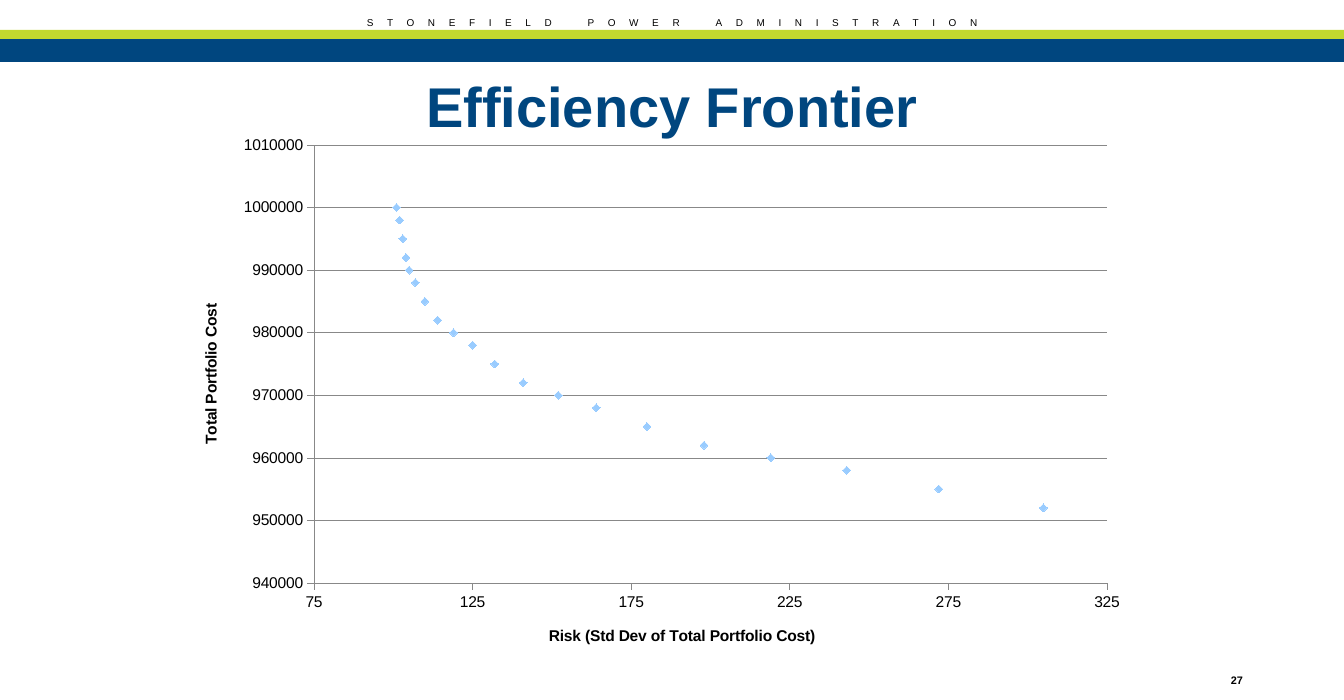
from lxml import etree
from pptx import Presentation
from pptx import util as u
from pptx.chart.data import XyChartData
from pptx.dml.color import RGBColor
from pptx.enum import chart as c, shapes, text
from pptx.oxml import ns

PX = u.Inches(1) / 112
FONT = "Arial"
NAVY, LIME, BLACK, GRAY, SKY = "00467F", "C1D82F", "000000", "888888", "99CCFF"

RISKS = [101, 102, 103, 104, 105, 107, 110, 114, 119, 125,
         132, 141, 152, 164, 180, 198, 219, 243, 272, 305]
TOP_COST, COST_STEP = 1000000, 2500


def color(value):
    return RGBColor.from_string(value)


def place(*lengths):
    return [u.Emu(round(length * PX)) for length in lengths]


def style(font, size, value=BLACK, bold=False):
    font.name, font.size, font.bold = FONT, u.Pt(size), bold
    font.color.rgb = color(value)


def prepare(frame):
    frame.word_wrap = True
    frame.auto_size = text.MSO_AUTO_SIZE.NONE
    frame.vertical_anchor = text.MSO_ANCHOR.MIDDLE
    frame.margin_left = frame.margin_right = 0
    frame.margin_top = frame.margin_bottom = 0
    para = frame.paragraphs[0]
    para.alignment = text.PP_ALIGN.CENTER
    return para


def add_span(para, words, size, value=BLACK, bold=False, spacing=0):
    """Add a run; spacing between letters is in hundredths of a point."""
    span = para.add_run()
    span.text = words
    style(span.font, size, value, bold)
    if spacing:
        span._r.get_or_add_rPr().set("spc", str(spacing))


def add_bar(page, left, top, width, height, fill):
    bar = page.shapes.add_shape(shapes.MSO_SHAPE.RECTANGLE,
                                *place(left, top, width, height))
    bar.shadow.inherit = False
    bar.fill.solid()
    bar.fill.fore_color.rgb = color(fill)
    bar.line.fill.background()


def add_header(page, left, top, width, height):
    # Agency name, letterspaced
    box = page.shapes.add_textbox(*place(left, top + 13, width, 20))
    para = prepare(box.text_frame)
    for index, word in enumerate(["STONEFIELD", "POWER", "ADMINISTRATION"]):
        if index:
            add_span(para, " ", 6.4, spacing=1250)
        add_span(para, word, 6.4, spacing=880)
    # Colour bands
    add_bar(page, left, top + 38, width, height - 38, NAVY)
    add_bar(page, left, top + 30, width, 9, LIME)


def add_title(page, left, top, width, height):
    title = page.shapes.title
    title.left, title.top, title.width, title.height = place(left, top, width, height)
    add_span(prepare(title.text_frame), "Efficiency Frontier", 36, NAVY, True)


def add_page_number(page, left, top, width, height):
    box = page.shapes.add_textbox(*place(left, top, width, height))
    add_span(prepare(box.text_frame), "27", 7, bold=True)


def set_layout(parent, before, **parts):
    """Give a chart part a manual layout, as fractions of the chart."""
    for old in parent.findall(ns.qn("c:layout")):
        parent.remove(old)
    layout = etree.Element(ns.qn("c:layout"))
    manual = etree.SubElement(layout, ns.qn("c:manualLayout"))
    for name, value in parts.items():
        etree.SubElement(manual, ns.qn("c:" + name)).set("val", str(value))
    follower = parent.find(ns.qn(before))
    if follower is None:
        parent.append(layout)
    else:
        follower.addprevious(layout)


def format_line(line):
    line.color.rgb, line.width = color(GRAY), u.Pt(0.25)


def format_axis(axis, low, high, step, words, x, y):
    axis.minimum_scale, axis.maximum_scale, axis.major_unit = low, high, step
    axis.major_tick_mark = c.XL_TICK_MARK.OUTSIDE
    axis.minor_tick_mark = c.XL_TICK_MARK.NONE
    format_line(axis.format.line)
    style(axis.tick_labels.font, 10)
    axis.tick_labels.number_format = "0"
    axis.tick_labels.number_format_is_linked = False
    add_span(axis.axis_title.text_frame.paragraphs[0], words, 10, bold=True)
    set_layout(axis.axis_title._element, "c:overlay",
               xMode="edge", yMode="edge", x=x, y=y)


def add_frontier_chart(page, left, top, width, height):
    data = XyChartData()
    points = data.add_series("Series 1")
    for index, risk in enumerate(RISKS):
        points.add_data_point(risk, round(TOP_COST - index * COST_STEP, -3))
    chart = page.shapes.add_chart(c.XL_CHART_TYPE.XY_SCATTER,
                                  *place(left, top, width, height), data).chart
    chart.has_legend = chart.has_title = False
    style(chart.font, 10)

    # Axes and gridlines
    format_axis(chart.category_axis, 75, 325, 50,
                "Risk (Std Dev of Total Portfolio Cost)", 368 / width, 498 / height)
    format_axis(chart.value_axis, 940000, 1010000, 10000,
                "Total Portfolio Cost", 20 / width, 176 / height)
    chart.category_axis.has_major_gridlines = False
    chart.value_axis.has_major_gridlines = True
    format_line(chart.value_axis.major_gridlines.format.line)

    # Markers only
    plot = chart.plots[0]
    plot.vary_by_categories = False
    series = plot.series[0]
    series.smooth = False
    series.format.line.fill.background()
    series.marker.style = c.XL_MARKER_STYLE.DIAMOND
    series.marker.size = 5
    series.marker.format.fill.solid()
    series.marker.format.fill.fore_color.rgb = color(SKY)
    series.marker.format.line.color.rgb = color(SKY)

    # Plot area, measured inside the axes
    area = chart._chartSpace.find(".//" + ns.qn("c:plotArea"))
    set_layout(area, "c:scatterChart", layoutTarget="inner", xMode="edge",
               yMode="edge", x=136 / width, y=20 / height,
               w=793 / width, h=438 / height)


def main():
    deck = Presentation()
    deck.slide_width, deck.slide_height = place(1344, 700)
    page = deck.slides.add_slide(deck.slide_layouts[5])
    add_header(page, 0, 0, 1344, 62)
    add_title(page, 0, 69, 1344, 73)
    add_frontier_chart(page, 178, 125, 960, 542)
    add_page_number(page, 1187, 662, 100, 36)
    deck.save("out.pptx")


if __name__ == "__main__":
    main()
